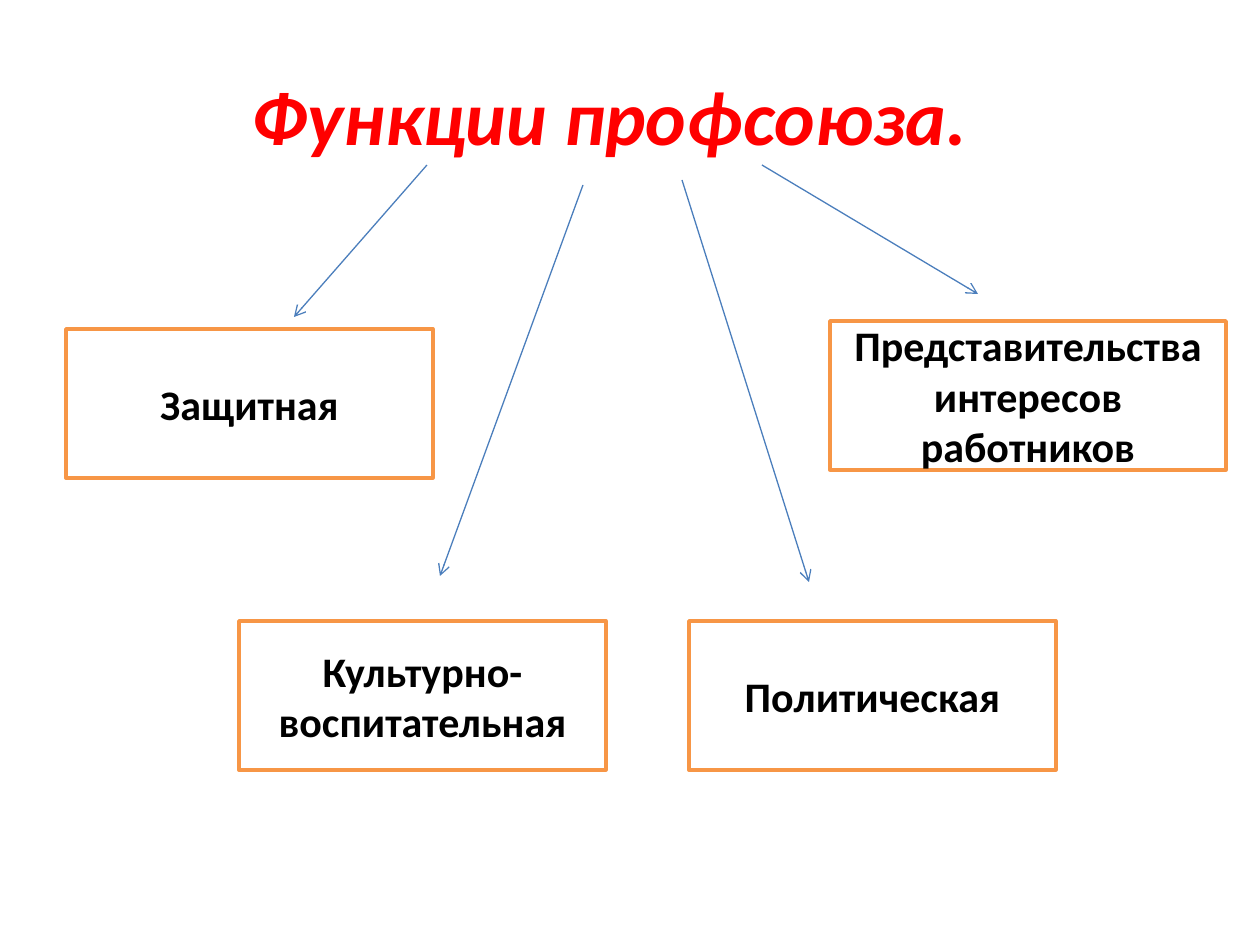
from lxml import etree
from pptx import Presentation
from pptx import util as u
from pptx.dml.color import RGBColor
from pptx.enum import shapes, text
from pptx.oxml.ns import qn

TITLE = "Функции профсоюза."
BOX_HEIGHT = 149
FUNCTIONS = [
    {"name": "Защитная", "box": (66, 329, 367), "arrow": (427, 165, 294, 317)},
    {"name": "Культурно-воспитательная", "box": (239, 621, 367), "arrow": (583, 185, 440, 576)},
    {"name": "Политическая", "box": (689, 621, 367), "arrow": (682, 180, 809, 582)},
    {"name": "Представительства интересов работников", "box": (830, 321, 396), "arrow": (762, 165, 978, 294)},
]
COLORS = {"title": "FF0000", "text": "000000", "fill": "FFFFFF", "border": "F79646", "arrow": "4B7EBC"}
FONT = "Calibri"
SCALE = u.Inches(1) / 126


def px(*lengths):
    return [round(length * SCALE) for length in lengths]


def color(name):
    return RGBColor.from_string(COLORS[name])


def write(shape, words, size, tint, italic=False):
    frame = shape.text_frame
    frame.word_wrap = True
    frame.vertical_anchor = text.MSO_ANCHOR.MIDDLE
    para = frame.paragraphs[0]
    para.alignment = text.PP_ALIGN.CENTER
    span = para.add_run()
    span.text = words
    span.font.name = FONT
    span.font.size = u.Pt(size)
    span.font.bold = True
    span.font.italic = italic
    span.font.color.rgb = color(tint)


def add_box(page, name, left, top, width):
    box = page.shapes.add_shape(shapes.MSO_SHAPE.RECTANGLE, *px(left, top, width, BOX_HEIGHT))
    box.shadow.inherit = False
    box.fill.solid()
    box.fill.fore_color.rgb = color("fill")
    box.line.color.rgb = color("border")
    box.line.width = u.Pt(2)
    write(box, name, 24, "text")


def add_arrow(page, ends):
    arrow = page.shapes.add_connector(shapes.MSO_CONNECTOR.STRAIGHT, *px(*ends))
    arrow.line.color.rgb = color("arrow")
    arrow.line.width = u.Pt(0.75)
    properties = arrow.element.spPr
    etree.SubElement(properties.find(qn("a:ln")), qn("a:tailEnd"), type="arrow")
    etree.SubElement(properties, qn("a:effectLst"))


def main():
    deck = Presentation()
    deck.slide_width, deck.slide_height = px(1260, 945)
    page = deck.slides.add_slide(deck.slide_layouts[5])
    title = page.shapes.title
    title.left, title.top, title.width, title.height = px(43, 36, 1134, 158)
    write(title, TITLE, 44, "title", italic=True)
    for function in FUNCTIONS:
        add_box(page, function["name"], *function["box"])
    for function in FUNCTIONS:
        add_arrow(page, function["arrow"])
    deck.save("out.pptx")


if __name__ == "__main__":
    main()
